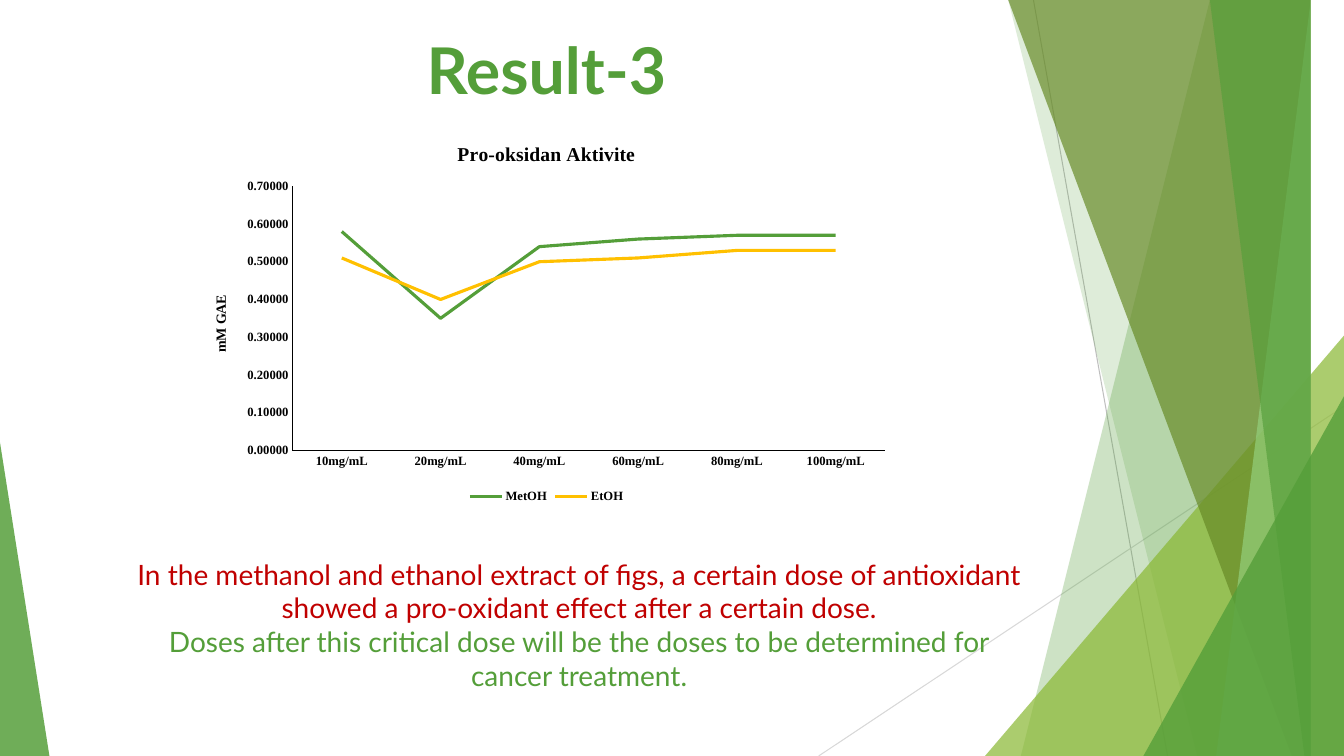
from lxml import etree
from pptx import Presentation
from pptx.chart.data import CategoryChartData
from pptx.dml.color import RGBColor
from pptx.enum import chart as ch, shapes, text
from pptx.oxml import parse_xml
from pptx.oxml.ns import nsdecls, qn
from pptx.util import Inches, Pt

GREEN = RGBColor(0x54, 0x9E, 0x39)
LIME = RGBColor(0x8A, 0xB8, 0x33)
OLIVE = RGBColor(0x67, 0x8A, 0x26)
PALE = RGBColor(0x94, 0xD0, 0x7D)
GOLD = RGBColor(0xFF, 0xC0, 0x00)
RED = RGBColor(0xC0, 0x00, 0x00)
BLACK = RGBColor(0x00, 0x00, 0x00)
GREY = RGBColor(0xBF, 0xBF, 0xBF)
LIGHT_GREY = RGBColor(0xD8, 0xD8, 0xD8)
W, H = 13.33, 7.5
BODY_FONT, CHART_FONT = "Lato", "Times New Roman"

# Content
TITLE = [("Result-3", GREEN)]
FINDINGS = [
    ("In the methanol and ethanol extract of figs, a certain dose of antioxidant "
     "showed a pro-oxidant effect after a certain dose.", RED),
    ("Doses after this critical dose will be the doses to be determined for "
     "cancer treatment.", GREEN),
]
CHART_TITLE, VALUE_TITLE = "Pro-oksidan Aktivite", "mM GAE"
DOSES = [f"{d}mg/mL" for d in (10, 20, 40, 60, 80, 100)]
SERIES = [
    ("MetOH", (0.58, 0.35, 0.54, 0.56, 0.57, 0.57), GREEN),
    ("EtOH", (0.51, 0.40, 0.50, 0.51, 0.53, 0.53), GOLD),
]

# Decoration: lines are (from, to, colour)
LINES = [((10.25, 0), (11.58, H), GREY), ((W, 4.03), (8.12, H), LIGHT_GREY)]
# Bands reach the right edge: (top x, bottom x, colour, opacity %)
# Wedges stand on the bottom edge: (left, top, width, apex, colour, opacity %)
BACK_BANDS = [(12.28, 10.04, GREEN, 29), (10.5, 11.83, GREEN, 19)]
BACK_WEDGES = [(9.77, 3.33, 3.56, 1, LIME, 71)]
FRONT_BANDS = [(10.21, 12.91, OLIVE, 69), (13.03, 11.92, PALE, 69),
               (11.96, 13.18, GREEN, 64)]
FRONT_WEDGES = [(11.34, 3.93, 1.99, 1, GREEN, 79), (0, 4.39, 0.49, 0, GREEN, 84)]


def paint(sp, color, opacity):
    sp.shadow.inherit = False
    sp.line.fill.background()
    sp.fill.solid()
    sp.fill.fore_color.rgb = color
    clr = sp.fill._xPr.find(".//" + qn("a:srgbClr"))
    etree.SubElement(clr, qn("a:alpha")).set("val", str(opacity * 1000))


def add_bands(s, bands):
    for top_x, bottom_x, color, opacity in bands:
        fb = s.shapes.build_freeform(top_x, 0, scale=Inches(1))
        fb.add_line_segments([(W, 0), (W, H), (bottom_x, H)], close=True)
        paint(fb.convert_to_shape(), color, opacity)


def add_wedges(s, wedges):
    for x, y, w, apex, color, opacity in wedges:
        sp = s.shapes.add_shape(shapes.MSO_SHAPE.ISOSCELES_TRIANGLE, Inches(x),
                                Inches(y), Inches(w), Inches(H - y))
        sp.adjustments[0] = apex
        paint(sp, color, opacity)


def add_text(s, x, y, w, h, paragraphs, size, bold=False):
    tf = s.shapes.add_textbox(Inches(x), Inches(y), Inches(w), Inches(h)).text_frame
    tf.word_wrap = True
    tf.vertical_anchor = text.MSO_ANCHOR.TOP
    for i, (words, color) in enumerate(paragraphs):
        p = tf.paragraphs[0] if i == 0 else tf.add_paragraph()
        p.text = words
        p.alignment = text.PP_ALIGN.CENTER
        style(p.runs[0].font, size, color, BODY_FONT, bold)


def style(font, size, color=BLACK, name=CHART_FONT, bold=True):
    font.size, font.name, font.bold = Pt(size), name, bold
    font.color.rgb = color


def set_title(owner, words, size):
    tf = owner.text_frame
    tf.text = words
    style(tf.paragraphs[0].runs[0].font, size)


def add_dose_chart(s):
    data = CategoryChartData(number_format="0.00000")
    data.categories = DOSES
    for name, values, _ in SERIES:
        data.add_series(name, values)
    chart = s.shapes.add_chart(ch.XL_CHART_TYPE.LINE, Inches(1.92), Inches(1.24),
                               Inches(7), Inches(3.8), data).chart
    style(chart.font, 10)
    chart.has_title = True
    set_title(chart.chart_title, CHART_TITLE, 14)
    chart.has_legend = True
    chart.legend.position = ch.XL_LEGEND_POSITION.BOTTOM
    chart.legend.include_in_layout = False
    style(chart.legend.font, 9)

    for axis in (chart.category_axis, chart.value_axis):
        axis.has_major_gridlines = False
        axis.major_tick_mark = axis.minor_tick_mark = ch.XL_TICK_MARK.NONE
        style(axis.tick_labels.font, 9)
        axis.format.line.color.rgb = BLACK
        axis.format.line.width = Pt(0.75)
    va = chart.value_axis
    va.minimum_scale, va.maximum_scale, va.major_unit = 0, 0.7, 0.1
    va.tick_labels.number_format = "0.00000"
    va.tick_labels.number_format_is_linked = False
    va.has_title = True
    set_title(va.axis_title, VALUE_TITLE, 10)

    plot = chart.plots[0]
    plot.vary_by_categories = False
    for series, (_, _, color) in zip(plot.series, SERIES):
        series.smooth = False
        series.marker.style = ch.XL_MARKER_STYLE.NONE
        series.format.line.color.rgb = color
        series.format.line.width = Pt(2.25)

    # Fixed inner plot area, as shares of the chart frame
    area = chart._chartSpace.find(".//" + qn("c:plotArea"))
    for old in area.findall(qn("c:layout")):
        area.remove(old)
    shares = "".join(f'<c:{k} val="{v}"/>' for k, v in
                     (("x", 0.14), ("y", 0.16), ("w", 0.84), ("h", 0.69)))
    area.insert(0, parse_xml(
        f'<c:layout {nsdecls("c")}><c:manualLayout><c:layoutTarget val="inner"/>'
        f'<c:xMode val="edge"/><c:yMode val="edge"/>{shares}'
        '</c:manualLayout></c:layout>'))


def main():
    prs = Presentation()
    prs.slide_width, prs.slide_height = Inches(W), Inches(H)
    s = prs.slides.add_slide(prs.slide_layouts[6])

    # Background decoration, back to front
    for start, end, color in LINES:
        line = s.shapes.add_connector(shapes.MSO_CONNECTOR.STRAIGHT,
                                      *(Inches(v) for v in start + end))
        line.line.color.rgb = color
        line.line.width = Pt(0.75)
        etree.SubElement(line._element.spPr, qn("a:effectLst"))
    add_bands(s, BACK_BANDS)
    add_wedges(s, BACK_WEDGES)
    add_bands(s, FRONT_BANDS)
    add_wedges(s, FRONT_WEDGES)

    # Findings, chart and title
    add_text(s, 1.18, 5.48, 9.13, 1.61, FINDINGS, 20)
    add_dose_chart(s)
    add_text(s, 0.42, 0.25, 10, 1.25, TITLE, 46, bold=True)
    prs.save("out.pptx")


if __name__ == "__main__":
    main()
